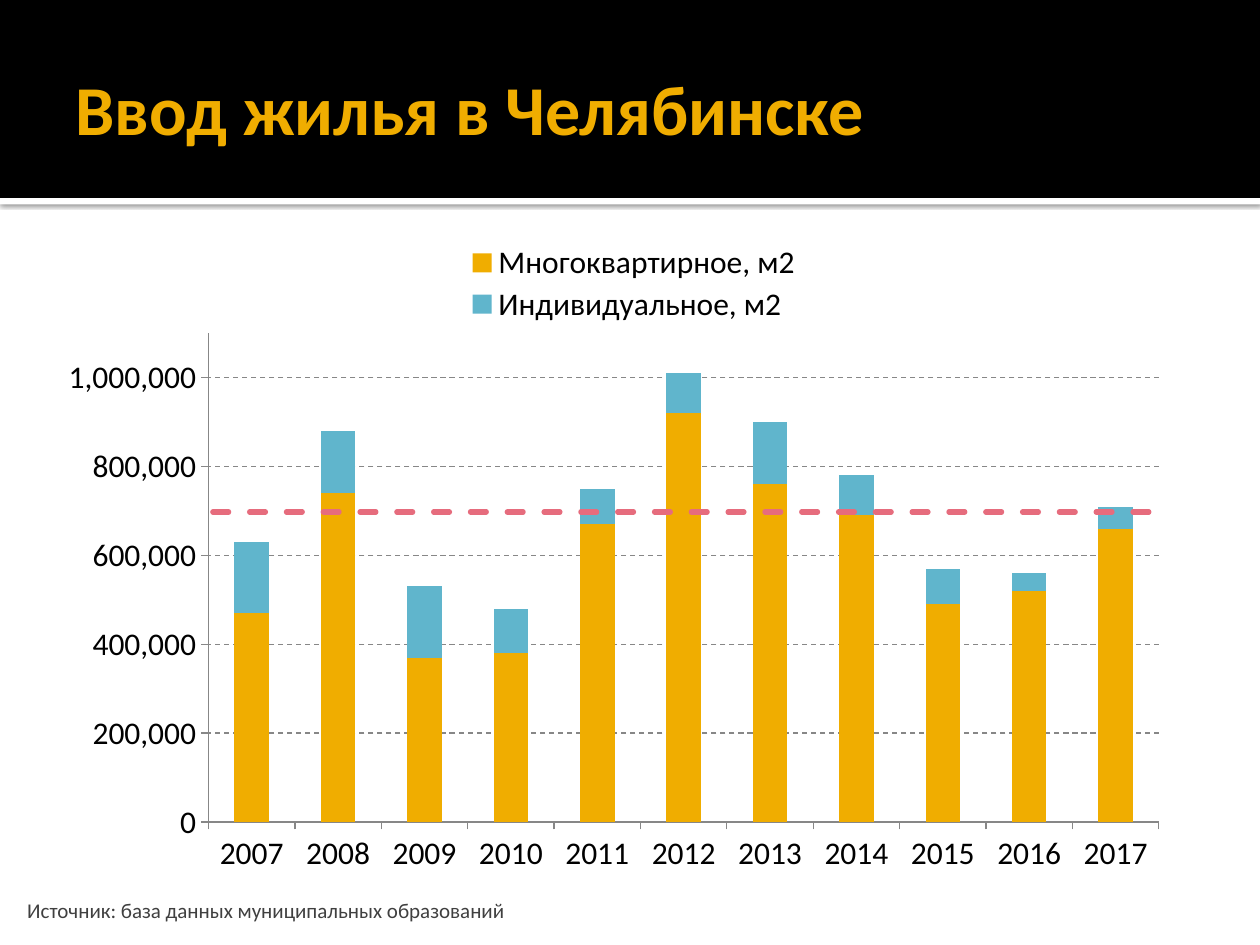
from lxml.etree import SubElement
from pptx import Presentation
from pptx.chart.data import CategoryChartData
from pptx.dml.color import RGBColor
from pptx.enum.chart import XL_CHART_TYPE, XL_LEGEND_POSITION, XL_TICK_MARK
from pptx.enum.dml import MSO_LINE
from pptx.enum.shapes import MSO_CONNECTOR, MSO_SHAPE
from pptx.enum.text import MSO_ANCHOR
from pptx.oxml.ns import qn
from pptx.util import Cm, Pt

hues = {
    "black": "000000", "white": "FFFFFF", "gold": "F0AD00",
    "blue": "60B5CC", "rose": "E66C7D", "dark": "404040", "grey": "878787",
}
color = {name: RGBColor.from_string(code) for name, code in hues.items()}

deck = Presentation()
deck.slide_width, deck.slide_height = Cm(25.4), Cm(19.05)
slide = deck.slides.add_slide(deck.slide_layouts[6])
shapes = slide.shapes


def add_text(text, box, size, hue, bold=False):
    label = shapes.add_textbox(*map(Cm, box))
    frame = label.text_frame
    frame.word_wrap = True
    frame.text = text
    font = frame.paragraphs[0].font
    font.name, font.size, font.bold = "Calibri", Pt(size), bold
    font.color.rgb = color[hue]
    return frame


def set_layout(parent, index, inner, area):
    for old in parent.findall(qn("c:layout")):
        parent.remove(old)
    layout = SubElement(parent, qn("c:layout"))
    parent.insert(index, layout)
    manual = SubElement(layout, qn("c:manualLayout"))
    if inner:
        SubElement(manual, qn("c:layoutTarget"), val="inner")
    for tag in ("xMode", "yMode"):
        SubElement(manual, qn("c:" + tag), val="edge")
    for tag, value in zip("xywh", area):
        SubElement(manual, qn("c:" + tag), val=str(value))


for hue, top, height in (("white", 3.99, 0.13), ("black", 0, 3.99)):
    band = shapes.add_shape(MSO_SHAPE.RECTANGLE, 0, Cm(top), Cm(25.4), Cm(height))
    band.shadow.inherit = False
    band.fill.solid()
    band.fill.fore_color.rgb = color[hue]
    band.line.fill.background()
    if hue == "white":
        effect = band._element.spPr.find(qn("a:effectLst"))
        shade = SubElement(effect, qn("a:outerShdw"), blurRad=str(Pt(2.5)),
                           dist=str(Pt(0.8)), dir="5400000", algn="t", rotWithShape="0")
        tint = SubElement(shade, qn("a:srgbClr"), val=hues["black"])
        SubElement(tint, qn("a:alpha"), val="60000")

title = add_text("Ввод жилья в Челябинске", (1.27, 0.43, 22.86, 3.48), 40, "gold", True)
title.vertical_anchor = MSO_ANCHOR.MIDDLE

data = CategoryChartData()
data.categories = [str(year) for year in range(2007, 2018)]
homes = {
    "Многоквартирное, м2": ("gold", (470, 740, 370, 380, 670, 920, 760, 690, 490, 520, 660)),
    "Индивидуальное, м2": ("blue", (160, 140, 160, 100, 80, 90, 140, 90, 80, 40, 50)),
}
for name, (hue, values) in homes.items():
    data.add_series(name, [value * 1000 for value in values])
chart = shapes.add_chart(XL_CHART_TYPE.COLUMN_STACKED, Cm(0.89), Cm(4.72),
                         Cm(22.86), Cm(13.26), data).chart
chart.has_title = False
chart.font.name, chart.font.size = "Calibri", Pt(18)
chart.font.color.rgb = color["black"]

plot = chart.plots[0]
plot.gap_width, plot.overlap = 150, 100
plot.vary_by_categories = False
for series, (hue, values) in zip(plot.series, homes.values()):
    series.format.fill.solid()
    series.format.fill.fore_color.rgb = color[hue]

scale = chart.value_axis
scale.minimum_scale, scale.maximum_scale, scale.major_unit = 0, 1100000, 200000
scale.tick_labels.number_format = "#,##0"
scale.tick_labels.number_format_is_linked = False
scale.has_major_gridlines = True
grid = scale.major_gridlines.format.line
grid.dash_style = MSO_LINE.DASH
for axis in (scale, chart.category_axis):
    axis.major_tick_mark = XL_TICK_MARK.OUTSIDE
    axis.tick_labels.font.size = Pt(18)
for line in (grid, scale.format.line, chart.category_axis.format.line):
    line.width = Pt(0.75)
    line.color.rgb = color["grey"]

chart.has_legend = True
legend = chart.legend
legend.position = XL_LEGEND_POSITION.TOP
legend.include_in_layout = False
legend.font.size = Pt(18)
set_layout(legend._element, 1, False, (0.36, 0.01, 0.32, 0.13))
area = chart._chartSpace.find(".//" + qn("c:plotArea"))
set_layout(area, 0, True, (0.145, 0.151, 0.838, 0.743))

mean = shapes.add_connector(MSO_CONNECTOR.STRAIGHT, Cm(4.29), Cm(10.32), Cm(23.39), Cm(10.32))
mean.line.color.rgb = color["rose"]
mean.line.width = Pt(3)
mean.line.dash_style = MSO_LINE.DASH
mean.line._ln.set("cap", "rnd")
SubElement(mean._element.spPr, qn("a:effectLst"))

add_text("Источник: база данных муниципальных образований", (0.3, 17.96, 16, 0.76), 12, "dark")

deck.save("out.pptx")
